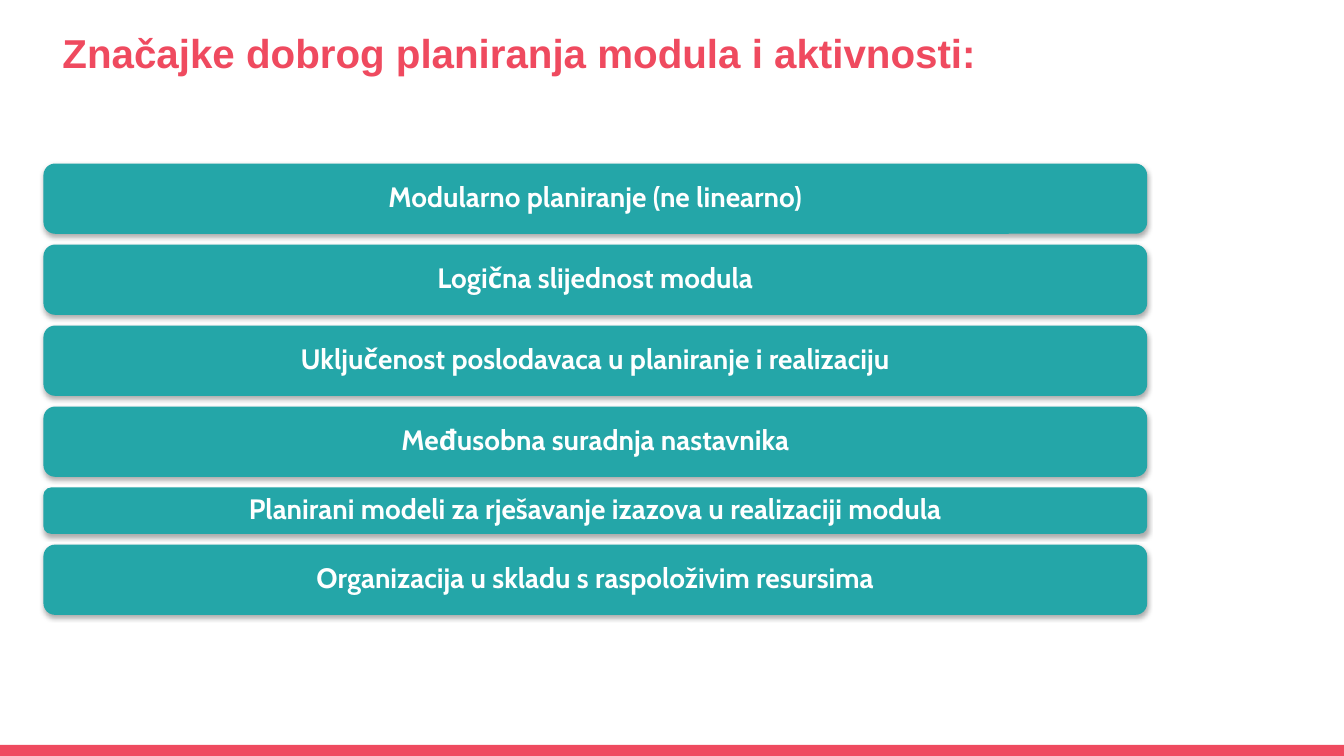
"""Build the slide on the features of good module planning."""
from lxml.etree import SubElement
from pptx import Presentation
from pptx.dml.color import RGBColor
from pptx.enum.shapes import MSO_SHAPE
from pptx.enum.text import MSO_ANCHOR, PP_ALIGN
from pptx.oxml.ns import qn
from pptx.util import Pt

TITLE = "Značajke dobrog planiranja modula i aktivnosti:"
BARS = [
    ("Modularno planiranje (ne linearno)", 50.2),
    ("Logična slijednost modula", 50.2),
    ("Uključenost poslodavaca u planiranje i realizaciju", 50.2),
    ("Međusobna suradnja nastavnika", 50.2),
    ("Planirani modeli za rješavanje izazova u realizaciji modula", 33.1),
    ("Organizacija u skladu s raspoloživim resursima", 50.2),
]
RED, TEAL, WHITE = "EF4A5F", "24A6A8", "FFFFFF"
WIDTH, HEIGHT, FOOTER = 960, 540, 8
BAR_LEFT, BAR_TOP, BAR_WIDTH, BAR_GAP = 31, 116.8, 788.4, 7.66


def rgb(value):
    """Turn a hex string into a colour."""
    return RGBColor.from_string(value)


def add_block(slide, kind, left, top, width, height, color):
    """Add a plain filled shape without line or shadow."""
    sp = slide.shapes.add_shape(kind, Pt(left), Pt(top), Pt(width), Pt(height))
    sp.shadow.inherit = False
    sp.fill.solid()
    sp.fill.fore_color.rgb = rgb(color)
    sp.line.fill.background()
    return sp


def add_soft_shadow(sp):
    """Add a soft black shadow below a shape."""
    effects = sp.element.spPr.find(qn("a:effectLst"))
    shadow = SubElement(effects, qn("a:outerShdw"), blurRad=str(Pt(3.5)),
                        dist=str(Pt(2.2)), dir="5400000", algn="ctr", rotWithShape="0")
    black = SubElement(shadow, qn("a:srgbClr"), val="000000")
    SubElement(black, qn("a:alpha"), val="32000")


def write_text(sp, text, font, size, color, align):
    """Write one bold, vertically centred paragraph."""
    tf = sp.text_frame
    tf.text = text
    tf.word_wrap = True
    tf.vertical_anchor = MSO_ANCHOR.MIDDLE
    p = tf.paragraphs[0]
    p.alignment = align
    p.line_spacing = 0.9
    p.font.name = font
    p.font.size = Pt(size)
    p.font.bold = True
    p.font.color.rgb = rgb(color)


def main():
    """Build and save the slide."""
    prs = Presentation()
    prs.slide_width, prs.slide_height = Pt(WIDTH), Pt(HEIGHT)
    s = prs.slides.add_slide(prs.slide_layouts[5])
    add_block(s, MSO_SHAPE.RECTANGLE, 0, HEIGHT - FOOTER, WIDTH, FOOTER, RED)

    title = s.shapes.title
    title.left, title.top, title.width, title.height = Pt(37.4), Pt(20), Pt(688.3), Pt(39)
    write_text(title, TITLE, "Arial", 28.8, RED, PP_ALIGN.LEFT)

    top = BAR_TOP
    for text, height in BARS:
        bar = add_block(s, MSO_SHAPE.ROUNDED_RECTANGLE, BAR_LEFT, top, BAR_WIDTH, height, TEAL)
        add_soft_shadow(bar)
        write_text(bar, text, "Cabin", 20, WHITE, PP_ALIGN.CENTER)
        top += height + BAR_GAP

    prs.save("out.pptx")


if __name__ == "__main__":
    main()
